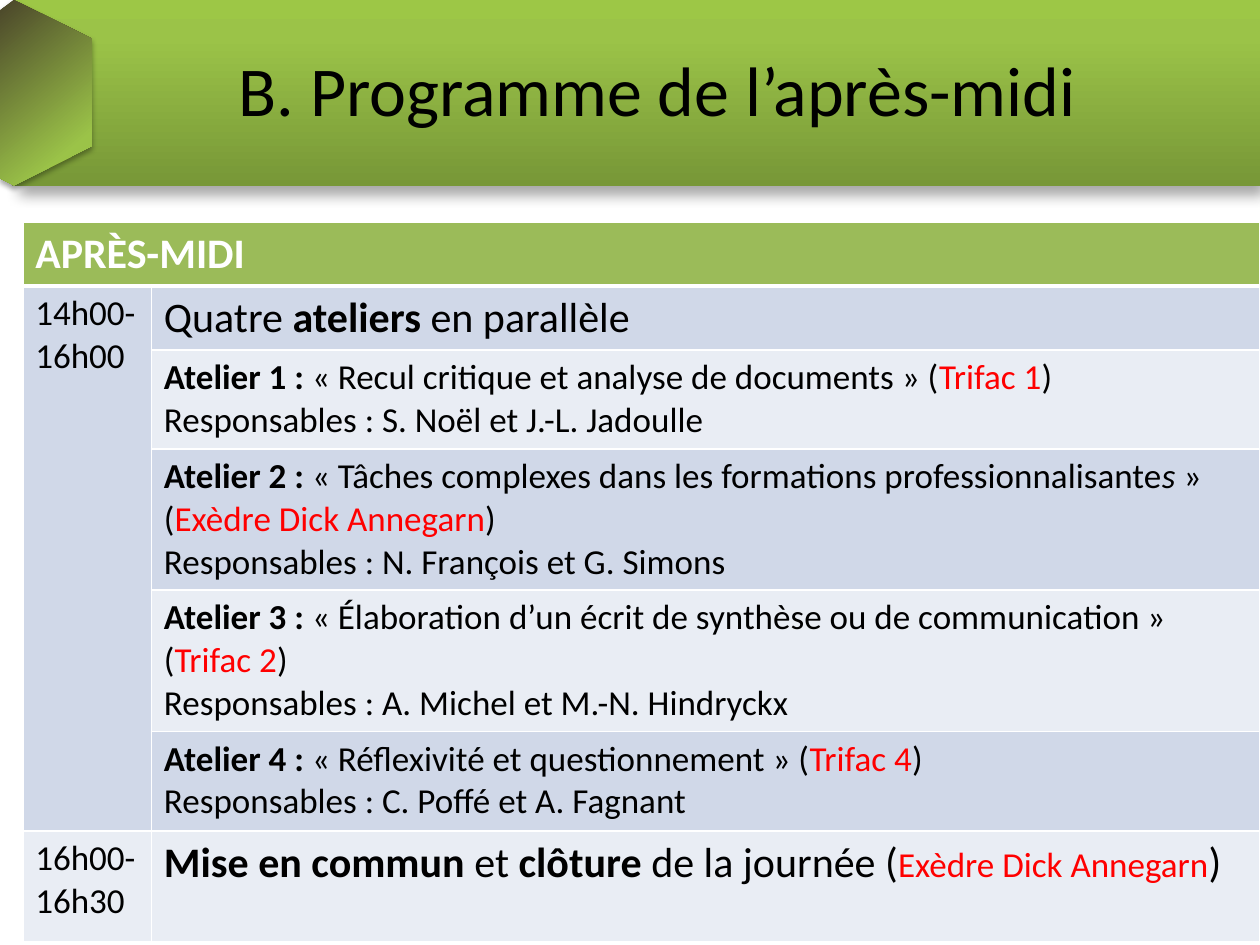
from copy import deepcopy

from lxml import etree
from pptx import Presentation
from pptx import util as u
from pptx.dml.color import RGBColor
from pptx.enum import text
from pptx.oxml import ns

Pt = u.Pt
COLORS = {
    "black": "000000", "white": "FFFFFF", "red": "FF0000",
    "header": "9BBB59", "band": "D0D8E8", "light": "E9EDF4",
    "olive": "779737", "brown": "4A452A", "green": "9BC348", "lime": "9DC746",
}


def rgb(name):
    return RGBColor.from_string(COLORS[name])


def add_run(paragraph, words, size=20, color="black", bold=False, italic=False):
    run = paragraph.add_run()
    run.text = words
    font = run.font
    font.name, font.size, font.bold, font.italic = "Calibri", Pt(size), bold, italic
    font.color.rgb = rgb(color)


def sub(parent, tag, **attributes):
    return etree.SubElement(parent, ns.qn(tag), {k: str(v) for k, v in attributes.items()})


class Deck:
    def __init__(self, width, height):
        self.prs = Presentation()
        self.prs.slide_width, self.prs.slide_height = Pt(width), Pt(height)
        self.slide = self.prs.slides.add_slide(self.prs.slide_layouts[5])

    def decorate(self, shape, first, angle, blur, distance, direction):
        """Fill with a gradient from first to green, and add a soft shadow."""
        shape.line.fill.background()
        shape.fill.gradient()
        shape.fill.gradient_angle = angle
        stops = shape._element.spPr.find(".//" + ns.qn("a:gsLst"))
        stops.append(deepcopy(stops[-1]))
        colors = [(0, first), (0.8, "green"), (1, "lime")]
        for stop, (position, color) in zip(shape.fill.gradient_stops, colors):
            stop.position = position
            stop.color.rgb = rgb(color)
        shape.shadow.inherit = False
        effects = shape._element.spPr.find(ns.qn("a:effectLst"))
        shadow = sub(effects, "a:outerShdw", blurRad=int(Pt(blur)), dist=int(Pt(distance)),
                     dir=direction * 60000, algn="ctr", rotWithShape=0)
        sub(sub(shadow, "a:srgbClr", val=COLORS["black"]), "a:alpha", val=35000)

    def polygon(self, points, **style):
        points = [(Pt(x), Pt(y)) for x, y in points]
        builder = self.slide.shapes.build_freeform(*points[0])
        builder.add_line_segments(points[1:], close=True)
        self.decorate(builder.convert_to_shape(), **style)

    def rectangle(self, left, top, width, height, **style):
        shape = self.slide.shapes.add_shape(1, Pt(left), Pt(top), Pt(width), Pt(height))
        self.decorate(shape, **style)

    def title(self, words, left, top, width, height):
        title = self.slide.shapes.title
        title._element.getparent().append(title._element)  # in front of the banner
        title.left, title.top, title.width, title.height = map(Pt, (left, top, width, height))
        frame = title.text_frame
        frame.auto_size = text.MSO_AUTO_SIZE.NONE
        frame.vertical_anchor = text.MSO_ANCHOR.MIDDLE
        heading = frame.paragraphs[0]
        heading.alignment = text.PP_ALIGN.CENTER
        heading.line_spacing = 0.8
        add_run(heading, words, size=40)

    def table(self, left, top, widths, heights):
        frame = self.slide.shapes.add_table(len(heights), len(widths), Pt(left), Pt(top),
                                            Pt(sum(widths)), Pt(sum(heights)))
        table = frame.table
        for column, width in zip(table.columns, widths):
            column.width = Pt(width)
        for row, height in zip(table.rows, heights):
            row.height = Pt(height)
        return table

    def cell(self, cell, fill, paragraphs=(), bottom=1):
        """Each paragraph is a list of (words, format) pairs."""
        properties = cell._tc.get_or_add_tcPr()
        for side, width in zip("LRTB", (1, 1, 1, bottom)):
            line = sub(properties, "a:ln" + side, w=int(Pt(width)))
            sub(sub(line, "a:solidFill"), "a:srgbClr", val=COLORS["white"])
        cell.fill.solid()
        cell.fill.fore_color.rgb = rgb(fill)
        for i, runs in enumerate(paragraphs):
            frame = cell.text_frame
            paragraph = frame.add_paragraph() if i else frame.paragraphs[0]
            for words, style in runs:
                add_run(paragraph, words, **style)


PLAIN, BOLD, RED = {}, {"bold": True}, {"color": "red"}
LARGE, LARGE_BOLD = {"size": 24}, {"size": 24, "bold": True}


def workshop(number, topic, room, leaders, last=""):
    """Paragraphs of one workshop; last is the italic end of its topic."""
    ending = [(last + "\u00a0", {"italic": True}), ("» (", PLAIN)] if last else [("\u00a0» (", PLAIN)]
    return [
        [(f"Atelier {number} :", BOLD), (f" «\u00a0{topic}", PLAIN), *ending,
         (room, RED), (")", PLAIN)],
        [(f"Responsables : {leaders}", PLAIN)],
    ]


def main():
    deck = Deck(720, 540)
    deck.rectangle(8, 0, 712, 106.5, first="olive", angle=90, blur=8, distance=5, direction=60)
    deck.polygon([(0, 6), (8, 0), (52.5, 22), (52.5, 83.5), (8, 106), (0, 102)],
                 first="brown", angle=310, blur=3.1, distance=1.8, direction=90)
    deck.title("B. Programme de l’après-midi", 73.5, 10, 604, 90)

    hall = "Exèdre Dick Annegarn"
    activities = [
        [[("Quatre ", LARGE), ("ateliers", LARGE_BOLD), (" en parallèle", LARGE)]],
        workshop(1, "Recul critique et analyse de documents", "Trifac 1",
                 "S. Noël et J.-L. Jadoulle"),
        workshop(2, "Tâches complexes dans les formations professionnalisante", hall,
                 "N. François et G. Simons", last="s"),
        workshop(3, "Élaboration d’un écrit de synthèse ou de communication", "Trifac 2",
                 "A. Michel et M.-N. Hindryckx"),
        workshop(4, "Réflexivité et questionnement", "Trifac 4", "C. Poffé et A. Fagnant"),
        [[("Mise en commun ", LARGE_BOLD), ("et ", LARGE), ("clôture", LARGE_BOLD),
          (" de la journée (", LARGE), (hall, RED), (")", LARGE)]],
    ]
    times = {1: "14h00-16h00", 6: "16h00-16h30"}

    programme = deck.table(13, 127, [73.5, 633.5], [36, 36, 56.5, 80.5, 80.5, 57, 63])
    programme.cell(0, 0).merge(programme.cell(0, 1))
    programme.cell(1, 0).merge(programme.cell(5, 0))
    heading = [[("APRÈS-MIDI", {"size": 24, "bold": True, "color": "white"})]]
    deck.cell(programme.cell(0, 0), "header", heading, bottom=3)
    deck.cell(programme.cell(0, 1), "header", bottom=3)
    for row, activity in enumerate(activities, 1):
        time = [[(times[row], PLAIN)]] if row in times else ()
        deck.cell(programme.cell(row, 0), "light" if row == 6 else "band", time)
        deck.cell(programme.cell(row, 1), "band" if row % 2 else "light", activity)
    deck.prs.save("out.pptx")


if __name__ == "__main__":
    main()
